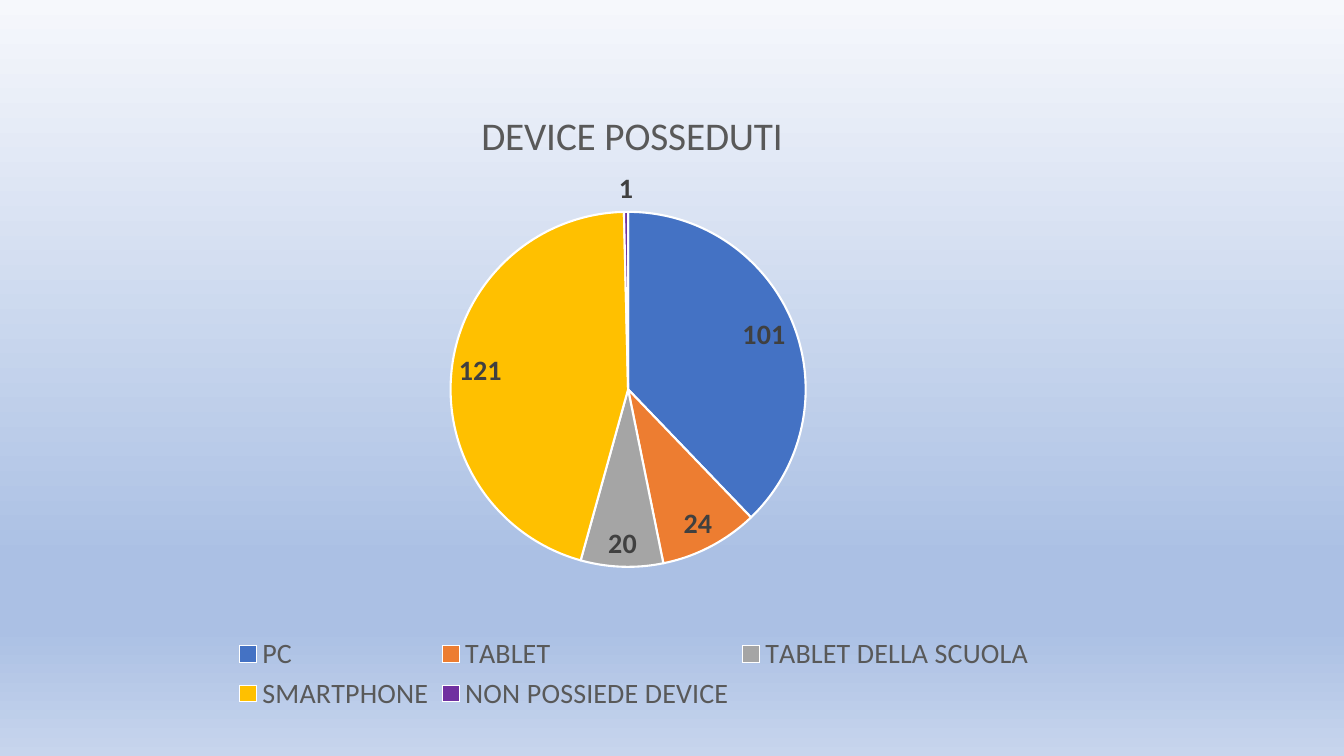
from lxml.etree import SubElement
from pptx import Presentation
from pptx.chart.data import CategoryChartData
from pptx.dml.color import RGBColor
from pptx.enum.chart import XL_CHART_TYPE as ChartType
from pptx.enum.chart import XL_LABEL_POSITION as LabelPosition
from pptx.enum.chart import XL_LEGEND_POSITION as LegendPosition
from pptx.oxml.ns import qn
from pptx.util import Inches, Pt

WHITE = RGBColor(0xFF, 0xFF, 0xFF)
TEXT_GREY = RGBColor(0x59, 0x59, 0x59)
LABEL_GREY = RGBColor(0x40, 0x40, 0x40)
BLUE = RGBColor(0x44, 0x72, 0xC4)
ORANGE = RGBColor(0xED, 0x7D, 0x31)
GREY = RGBColor(0xA5, 0xA5, 0xA5)
YELLOW = RGBColor(0xFF, 0xC0, 0x00)
PURPLE = RGBColor(0x70, 0x30, 0xA0)
SKY_TOP = RGBColor(0xF6, 0xF8, 0xFC)
SKY_MIDDLE = RGBColor(0xAB, 0xC0, 0xE4)
SKY_BOTTOM = RGBColor(0xC7, 0xD5, 0xED)

BACKGROUND_STOPS = [(0, SKY_TOP), (74, SKY_MIDDLE), (83, SKY_MIDDLE), (100, SKY_BOTTOM)]
DEVICES = [
    ("PC", 101, BLUE),
    ("TABLET", 24, ORANGE),
    ("TABLET DELLA SCUOLA", 20, GREY),
    ("SMARTPHONE", 121, YELLOW),
    ("NON POSSIEDE DEVICE", 1, PURPLE),
]


def place_chart_part(part, index, **fractions):
    """Give a chart part a manual layout in fractions of the chart, as child number index."""
    for automatic_layout in part.findall(qn("c:layout")):
        part.remove(automatic_layout)
    layout = part.makeelement(qn("c:layout"), {})
    part.insert(index, layout)
    manual = SubElement(layout, qn("c:manualLayout"))
    if part.tag == qn("c:plotArea"):
        SubElement(manual, qn("c:layoutTarget"), val="inner")
    for axis in ("x", "y"):
        SubElement(manual, qn(f"c:{axis}Mode"), val="edge")
    for name, fraction in fractions.items():
        SubElement(manual, qn(f"c:{name}"), val=str(fraction))


class DeviceSlide:
    font_name = "Calibri"

    def __init__(self, presentation):
        self.slide = presentation.slides.add_slide(presentation.slide_layouts[6])

    def style_font(self, font, size, color, bold=False):
        font.name = self.font_name
        font.size = Pt(size)
        font.bold = bold
        font.color.rgb = color

    def add_background(self, stops):
        fill = self.slide.background.fill
        fill.gradient()
        fill.gradient_angle = 270
        stop_list = self.slide.element.find(".//" + qn("a:gsLst"))
        for default_stop in list(stop_list):
            stop_list.remove(default_stop)
        for percent, color in stops:
            stop = SubElement(stop_list, qn("a:gs"), pos=str(percent * 1000))
            SubElement(stop, qn("a:srgbClr"), val=str(color))

    def add_pie(self, title, entries, left, top, width, height):
        names, values, colors = zip(*entries)
        data = CategoryChartData()
        data.categories = names
        data.add_series("Series 1", values)
        frame = self.slide.shapes.add_chart(
            ChartType.PIE, Inches(left), Inches(top), Inches(width), Inches(height), data)
        chart = frame.chart
        self.style_font(chart.font, 10, TEXT_GREY)
        self.add_title(chart, title)
        self.add_legend(chart)

        plot = chart.plots[0]
        plot.vary_by_categories = True
        series = plot.series[0]
        for index, color in enumerate(colors):
            slice_format = series.points[index].format
            slice_format.fill.solid()
            slice_format.fill.fore_color.rgb = color
            slice_format.line.color.rgb = WHITE
            slice_format.line.width = Pt(1.5)
        labels = series.data_labels
        labels.show_value = True
        labels.position = LabelPosition.BEST_FIT
        self.style_font(labels.font, 20, LABEL_GREY, bold=True)
        plot_area = chart.element.find(".//" + qn("c:plotArea"))
        place_chart_part(plot_area, 0, x=0.35, y=0.22, w=0.3, h=0.55)

    def add_title(self, chart, text):
        chart.has_title = True
        title = chart.chart_title
        title.include_in_layout = False
        title.text_frame.text = text
        self.style_font(title.text_frame.paragraphs[0].runs[0].font, 28, TEXT_GREY)
        place_chart_part(chart.element.find(".//" + qn("c:title")), 1, x=0.37, y=0.05)

    def add_legend(self, chart):
        chart.has_legend = True
        legend = chart.legend
        legend.position = LegendPosition.BOTTOM
        legend.include_in_layout = False
        self.style_font(legend.font, 20, TEXT_GREY)
        legend_part = chart.element.find(".//" + qn("c:legend"))
        place_chart_part(legend_part, 1, x=0.16, y=0.87, w=0.69, h=0.13)


def main():
    presentation = Presentation()
    presentation.slide_width = Inches(13.33)
    presentation.slide_height = Inches(7.5)
    device_slide = DeviceSlide(presentation)
    device_slide.add_background(BACKGROUND_STOPS)
    device_slide.add_pie("DEVICE POSSEDUTI", DEVICES, 0.36, 0.69, 11.74, 6.41)
    presentation.save("out.pptx")


if __name__ == "__main__":
    main()
